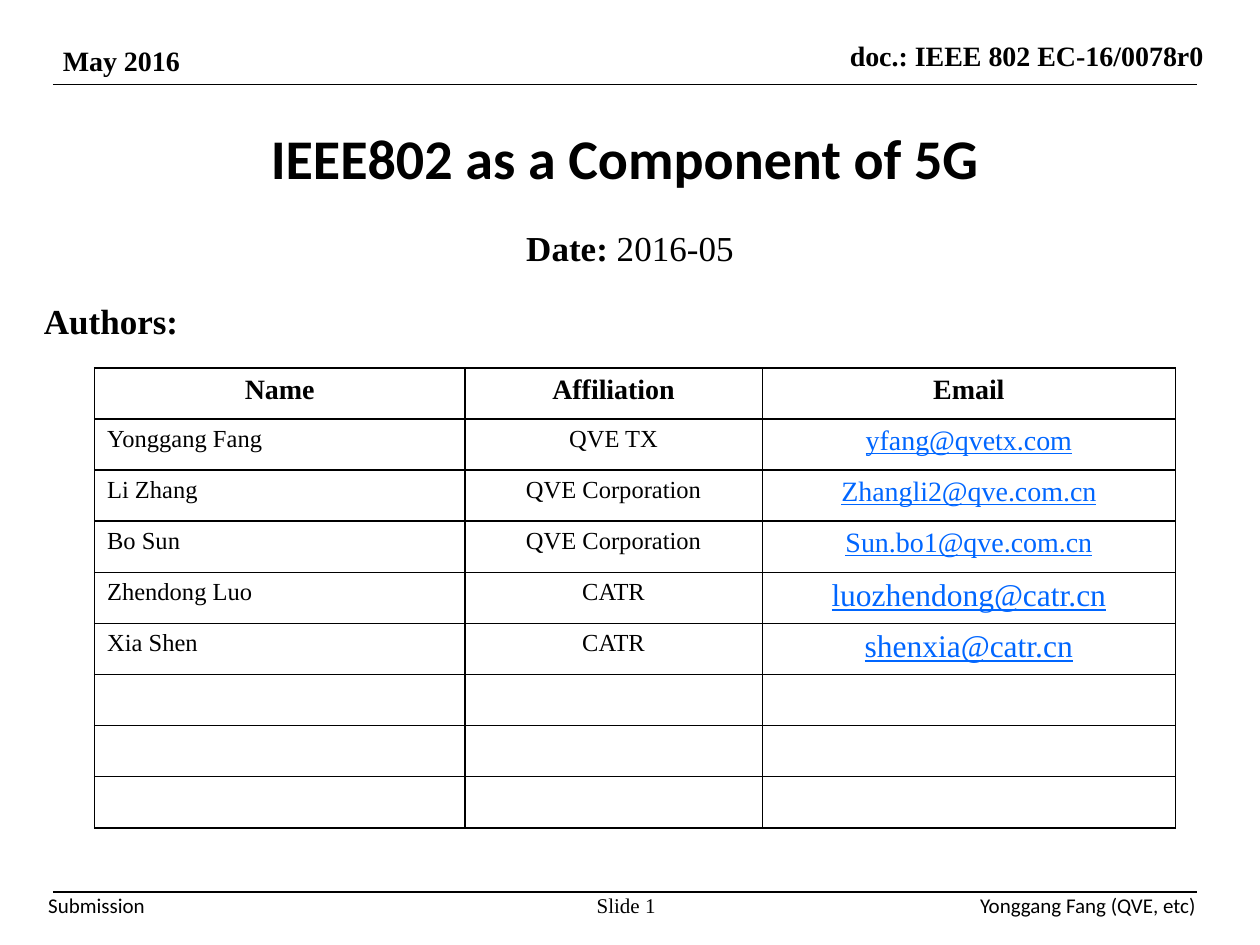
"""Build the title slide of a standards submission with its table of authors."""
from lxml import etree
from pptx import Presentation
from pptx.enum.shapes import MSO_CONNECTOR
from pptx.enum.text import MSO_ANCHOR, PP_ALIGN
from pptx.dml.color import RGBColor
from pptx.oxml.ns import qn
from pptx.util import Inches, Pt

LEFT, CENTER, RIGHT = PP_ALIGN.LEFT, PP_ALIGN.CENTER, PP_ALIGN.RIGHT
TOP, MIDDLE = MSO_ANCHOR.TOP, MSO_ANCHOR.MIDDLE
STRAIGHT = MSO_CONNECTOR.STRAIGHT
COLORS = {"ink": "000000", "link": "0066FF"}
SERIF, SANS = "Times New Roman", "Calibri"

RULE_LEFT, RULE_RIGHT = 0.42, 9.5
RULE_TOPS = (0.67, 7.08)
HEADER = {"size": 16, "bold": True}
FOOTER = {"size": 12, "margins": (0, 0)}
BODY = {"size": 20}
TEXTS = [
    ((6.1, 0.26, 3.55, 0.37), [("doc.: IEEE 802 EC-16/0078r0", True)], {**HEADER, "align": RIGHT}),
    ((0.4, 0.3, 1.14, 0.37), [("May 2016", True)], {**HEADER, "wrap": False}),
    ((0.08, 7.08, 1.07, 0.2), [("Submission", False)], {**FOOTER, "font": SANS, "align": RIGHT}),
    ((7.58, 7.08, 1.91, 0.2), [("Yonggang Fang (QVE, etc)", False)],
     {**FOOTER, "font": SANS, "align": RIGHT}),
    ((0.42, 0.75, 9.08, 1), [("IEEE802 as a Component of 5G", True)],
     {"size": 32, "font": SANS, "align": CENTER, "anchor": MIDDLE}),
    ((0.75, 1.75, 8.5, 0.42), [("Date:", True), (" 2016-05", False)], {**BODY, "align": CENTER}),
    ((4.69, 7.08, 0.56, 0.2), [("Slide 1", False)], {**FOOTER, "align": CENTER}),
    ((0.25, 2.33, 1.58, 0.42), [("Authors:", True)], BODY),
]

HEADINGS = ("Name", "Affiliation", "Email")
AUTHORS = [
    ("Yonggang Fang", "QVE TX", "yfang@qvetx.com", 16),
    ("Li Zhang", "QVE Corporation", "Zhangli2@qve.com.cn", 16),
    ("Bo Sun", "QVE Corporation", "Sun.bo1@qve.com.cn", 16),
    ("Zhendong Luo", "CATR", "luozhendong@catr.cn", 18),
    ("Xia Shen", "CATR", "shenxia@catr.cn", 18),
]
COLUMN_WIDTHS = (2.94, 2.36, 3.28)
TABLE_LEFT, TABLE_TOP, TABLE_HEIGHT = 0.75, 2.92, 3.65
ROW_COUNT = 9


def write_text(frame, runs, size=14, font=SERIF, color="ink", align=LEFT, underline=False):
    paragraph = frame.paragraphs[0]
    paragraph.alignment = align
    for text, bold in runs:
        run = paragraph.add_run()
        run.text = text
        run.font.name = font
        run.font.size = Pt(size)
        run.font.bold = bold
        run.font.underline = underline
        run.font.color.rgb = RGBColor.from_string(COLORS[color])


def add_text(slide, box, runs, anchor=TOP, margins=(0.1, 0.05), wrap=True, bold=None, **text_format):
    frame = slide.shapes.add_textbox(*map(Inches, box)).text_frame
    frame.word_wrap = wrap
    frame.vertical_anchor = anchor
    frame.margin_left = frame.margin_right = Inches(margins[0])
    frame.margin_top = frame.margin_bottom = Inches(margins[1])
    write_text(frame, runs, **text_format)


def add_rule(slide, top):
    rule = slide.shapes.add_connector(
        STRAIGHT, Inches(RULE_LEFT), Inches(top), Inches(RULE_RIGHT), Inches(top))
    rule.line.color.rgb = RGBColor.from_string(COLORS["ink"])
    rule.line.width = Pt(1)
    etree.SubElement(rule._element.spPr, qn("a:effectLst"))


def add_borders(cell):
    properties = cell._tc.get_or_add_tcPr()
    for side in ("a:lnL", "a:lnR", "a:lnT", "a:lnB"):
        line = etree.SubElement(properties, qn(side), w=str(Pt(1)))
        fill = etree.SubElement(line, qn("a:solidFill"))
        etree.SubElement(fill, qn("a:srgbClr"), val=COLORS["ink"])


def add_authors(slide):
    table = slide.shapes.add_table(
        ROW_COUNT, len(COLUMN_WIDTHS), Inches(TABLE_LEFT), Inches(TABLE_TOP),
        Inches(sum(COLUMN_WIDTHS)), Inches(TABLE_HEIGHT)).table
    table.first_row = table.horz_banding = False
    for column, width in zip(table.columns, COLUMN_WIDTHS):
        column.width = Inches(width)
    for cell in table.iter_cells():
        add_borders(cell)
        cell.fill.background()
    for column, heading in enumerate(HEADINGS):
        write_text(table.cell(0, column).text_frame, [(heading, True)], size=16, align=CENTER)
    for row, (name, affiliation, email, email_size) in enumerate(AUTHORS, start=1):
        write_text(table.cell(row, 0).text_frame, [(name, False)])
        write_text(table.cell(row, 1).text_frame, [(affiliation, False)], align=CENTER)
        write_text(table.cell(row, 2).text_frame, [(email, False)], size=email_size,
                   color="link", align=CENTER, underline=True)


def main():
    presentation = Presentation()
    presentation.slide_width, presentation.slide_height = Inches(10), Inches(7.5)
    slide = presentation.slides.add_slide(presentation.slide_layouts[6])
    for top in RULE_TOPS:
        add_rule(slide, top)
    for box, runs, text_format in TEXTS:
        add_text(slide, box, runs, **text_format)
    add_authors(slide)
    presentation.save("out.pptx")


if __name__ == "__main__":
    main()
